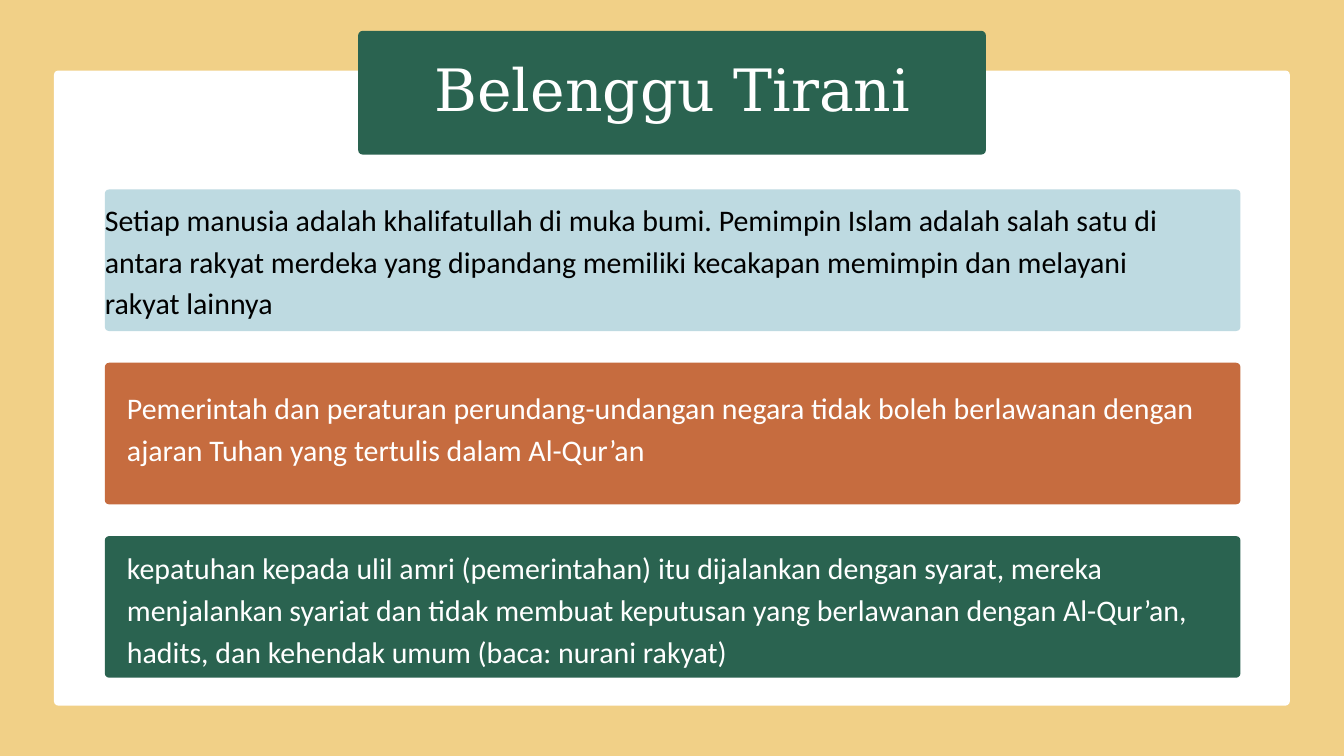
"""Build the "Belenggu Tirani" slide: a title plate above three coloured statement cards."""
from dataclasses import dataclass

from pptx import Presentation
from pptx import util as u
from pptx.dml.color import RGBColor
from pptx.enum import shapes, text

GOLD, WHITE, BLACK = "F1D087", "FFFFFF", "000000"
GREEN, BLUE, ORANGE = "2A6350", "BEDAE1", "C66C3F"
CORNER_RADIUS = 4.6
CARD_LEFT, CARD_TOP, CARD_WIDTH, CARD_HEIGHT = 112.3, 203, 1216.8, 151.7
CARD_PITCH = 185.7
STATEMENT_WIDTH = 1169.3


@dataclass(frozen=True)
class Box:
    left: float
    top: float
    width: float
    height: float

    def lengths(self) -> list[u.Length]:
        return [u.Pt(value) for value in (self.left, self.top, self.width, self.height)]


@dataclass(frozen=True)
class TextStyle:
    font: str
    size: float
    line_spacing: float
    alignment: text.PP_ALIGN


@dataclass(frozen=True)
class Card:
    fill: str
    color: str
    indent: float
    text_offset: float
    text_height: float
    statement: str


TITLE = TextStyle("DejaVu Serif", 62.6, 82.6, text.PP_ALIGN.CENTER)
STATEMENT = TextStyle("Calibri", 32, 44.8, text.PP_ALIGN.LEFT)

CARDS = [
    Card(BLUE, BLACK, 0, 6.5, 131,
         "Setiap manusia adalah khalifatullah di muka bumi. Pemimpin Islam adalah salah satu di "
         "antara rakyat merdeka yang dipandang memiliki kecakapan memimpin dan melayani "
         "rakyat lainnya"),
    Card(ORANGE, WHITE, 23.8, 22.4, 86.4,
         "Pemerintah dan peraturan perundang-undangan negara tidak boleh berlawanan dengan "
         "ajaran Tuhan yang tertulis dalam Al-Qur’an"),
    Card(GREEN, WHITE, 23.8, 8.1, 131,
         "kepatuhan kepada ulil amri (pemerintahan) itu dijalankan dengan syarat, mereka "
         "menjalankan syariat dan tidak membuat keputusan yang berlawanan dengan Al-Qur’an, "
         "hadits, dan kehendak umum (baca: nurani rakyat)"),
]


def set_color(color_format, value: str) -> None:
    color_format.rgb = RGBColor.from_string(value)


def add_panel(slide, box: Box, fill: str) -> None:
    shape = slide.shapes.add_shape(shapes.MSO_SHAPE.ROUNDED_RECTANGLE, *box.lengths())
    shape.adjustments[0] = CORNER_RADIUS / min(box.width, box.height)
    shape.shadow.inherit = False
    shape.fill.solid()
    set_color(shape.fill.fore_color, fill)
    shape.line.fill.background()


def add_text(slide, box: Box, content: str, style: TextStyle, color: str) -> None:
    frame = slide.shapes.add_textbox(*box.lengths()).text_frame
    frame.word_wrap = True
    frame.auto_size = text.MSO_AUTO_SIZE.SHAPE_TO_FIT_TEXT
    frame.margin_left = frame.margin_top = frame.margin_right = frame.margin_bottom = 0
    frame.text = content
    paragraph = frame.paragraphs[0]
    paragraph.alignment = style.alignment
    paragraph.line_spacing = u.Pt(style.line_spacing)
    for run in paragraph.runs:
        run.font.name = style.font
        run.font.size = u.Pt(style.size)
        set_color(run.font.color, color)


def add_card(slide, card: Card, top: float) -> None:
    add_panel(slide, Box(CARD_LEFT, top, CARD_WIDTH, CARD_HEIGHT), card.fill)
    text_box = Box(CARD_LEFT + card.indent, top + card.text_offset,
                   STATEMENT_WIDTH, card.text_height)
    add_text(slide, text_box, card.statement, STATEMENT, card.color)


def main() -> None:
    presentation = Presentation()
    presentation.slide_width, presentation.slide_height = u.Pt(1440), u.Pt(810)
    slide = presentation.slides.add_slide(presentation.slide_layouts[6])
    slide.background.fill.solid()
    set_color(slide.background.fill.fore_color, GOLD)

    add_panel(slide, Box(57.8, 75.6, 1324.2, 680.4), WHITE)
    add_panel(slide, Box(383.8, 33.1, 672.5, 132.5), GREEN)
    add_text(slide, Box(405.4, 49.7, 630.7, 164.2), "Belenggu Tirani", TITLE, WHITE)
    for index, card in enumerate(CARDS):
        add_card(slide, card, CARD_TOP + index * CARD_PITCH)

    presentation.save("out.pptx")


if __name__ == "__main__":
    main()
